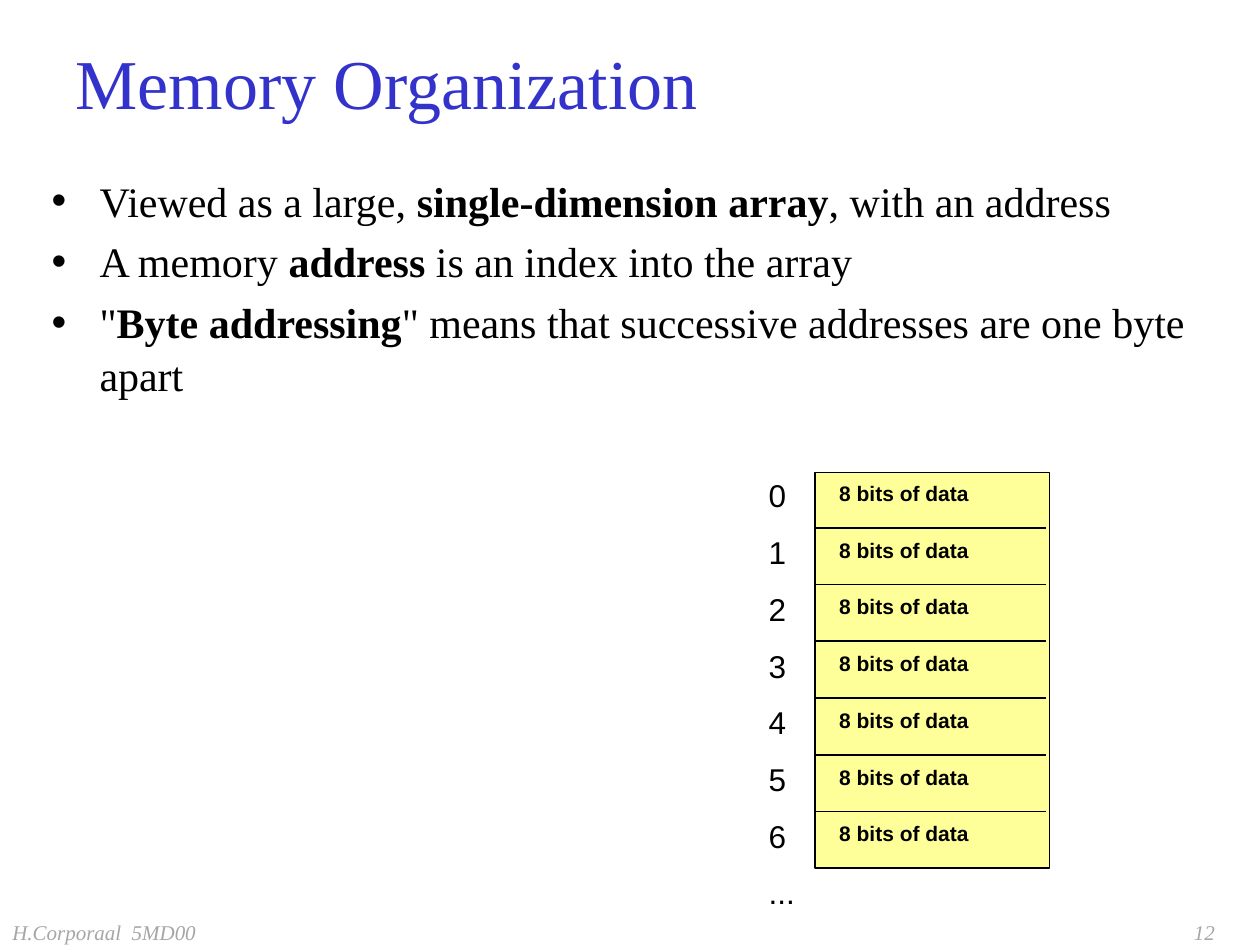
from lxml.etree import SubElement
from pptx import Presentation
from pptx.dml.color import RGBColor
from pptx.enum.shapes import MSO_CONNECTOR, MSO_SHAPE
from pptx.enum.text import MSO_ANCHOR, MSO_AUTO_SIZE, PP_ALIGN
from pptx.oxml.ns import qn
from pptx.util import Inches, Pt

COLORS = {"title": "3333CC", "text": "000000", "footer": "A6A6A6", "cell": "FFFF99"}
SERIF, SANS = "Times New Roman", "Arial"
BULLETS = [
    [("Viewed as a large, ", False), ("single-dimension array", True),
     (", with an address", False)],
    [("A memory ", False), ("address", True), (" is an index into the array", False)],
    [('"', False), ("Byte addressing", True),
     ('" means that successive addresses are one byte apart', False)],
]
ADDRESSES = ["0", "1", "2", "3", "4", "5", "6", "..."]
CELLS = 7
TOP, PITCH = 3.75, 0.45


def format_run(r, font, size, color, bold=False, italic=False):
    r.font.name = font
    r.font.size = Pt(size)
    r.font.bold = bold
    r.font.italic = italic
    r.font.color.rgb = RGBColor.from_string(COLORS[color])


def place(sp, left, top, width, height):
    sp.left, sp.top = Inches(left), Inches(top)
    sp.width, sp.height = Inches(width), Inches(height)


def add_title(s, text):
    sp = s.shapes.title
    place(sp, 0.5, 0.24, 9, 0.82)
    tf = sp.text_frame
    tf.text = text
    tf.auto_size = MSO_AUTO_SIZE.NONE
    tf.vertical_anchor = MSO_ANCHOR.MIDDLE
    p = tf.paragraphs[0]
    p.alignment = PP_ALIGN.LEFT
    format_run(p.runs[0], SERIF, 40, "title")


def add_bullets(s, items):
    sp = s.placeholders[1]
    place(sp, 0.41, 1.27, 9.09, 5.89)
    tf = sp.text_frame
    tf.auto_size = MSO_AUTO_SIZE.NONE
    tf.margin_left = 0
    tf.margin_right = Inches(0.05)
    tf.margin_top = Inches(0.1)
    for i, parts in enumerate(items):
        p = tf.add_paragraph() if i else tf.paragraphs[0]
        p.space_before = Pt(4.5)
        p.line_spacing = 1.05
        pPr = p._p.get_or_add_pPr()
        pPr.set("marL", str(Inches(0.38)))
        pPr.set("indent", str(-Inches(0.38)))
        SubElement(pPr, qn("a:buChar")).set("char", "•")
        for text, bold in parts:
            r = p.add_run()
            r.text = text
            format_run(r, SERIF, 24, "text", bold)


def add_footer(s, left, text, align):
    sp = s.shapes.add_textbox(Inches(left), Inches(7.3), Inches(2.33), Inches(0.2))
    tf = sp.text_frame
    tf.word_wrap = True
    tf.vertical_anchor = MSO_ANCHOR.MIDDLE
    tf.text = text
    p = tf.paragraphs[0]
    p.alignment = align
    format_run(p.runs[0], SERIF, 12, "footer", italic=True)


def add_label(shapes, left, top, width, height, text, size, spacing, bold=False):
    sp = shapes.add_textbox(Inches(left), Inches(top), Inches(width), Inches(height))
    tf = sp.text_frame
    tf.word_wrap = False
    tf.margin_left = tf.margin_right = Inches(0.02)
    tf.margin_top = tf.margin_bottom = Inches(0.03)
    tf.text = text
    p = tf.paragraphs[0]
    p.alignment = PP_ALIGN.LEFT
    p.line_spacing = Pt(spacing)
    format_run(p.runs[0], SANS, size, "text", bold)


def add_block(shapes):
    sp = shapes.add_shape(MSO_SHAPE.RECTANGLE, Inches(6.47), Inches(TOP),
                          Inches(1.86), Inches(3.14))
    sp.shadow.inherit = False
    sp.fill.solid()
    sp.fill.fore_color.rgb = RGBColor.from_string(COLORS["cell"])
    sp.line.color.rgb = RGBColor.from_string(COLORS["text"])
    sp.line.width = Pt(1)


def add_divider(shapes, y):
    line = shapes.add_connector(MSO_CONNECTOR.STRAIGHT, Inches(6.47), Inches(y),
                                Inches(8.3), Inches(y))
    line.line.color.rgb = RGBColor.from_string(COLORS["text"])
    line.line.width = Pt(1)
    SubElement(line._element.spPr, qn("a:effectLst"))


def add_memory(s):
    shapes = s.shapes.add_group_shape().shapes
    add_block(shapes)
    for i in range(CELLS):
        add_divider(shapes, 4.19 + i * PITCH)
    for i, address in enumerate(ADDRESSES):
        add_label(shapes, 6.08, TOP + 0.01 + i * PITCH, 0.83, 0.52, address, 18, 21)
    for i in range(CELLS):
        add_label(shapes, 6.64, TOP + 0.04 + i * PITCH, 2.11, 0.4,
                  "8 bits of data", 12, 14, bold=True)


def main():
    prs = Presentation()
    prs.slide_width, prs.slide_height = Inches(10), Inches(7.5)
    s = prs.slides.add_slide(prs.slide_layouts[1])
    add_title(s, "Memory Organization")
    add_bullets(s, BULLETS)
    add_footer(s, 0, "H.Corporaal  5MD00", PP_ALIGN.LEFT)
    add_footer(s, 7.41, "12", PP_ALIGN.RIGHT)
    add_memory(s)
    prs.save("out.pptx")


if __name__ == "__main__":
    main()
